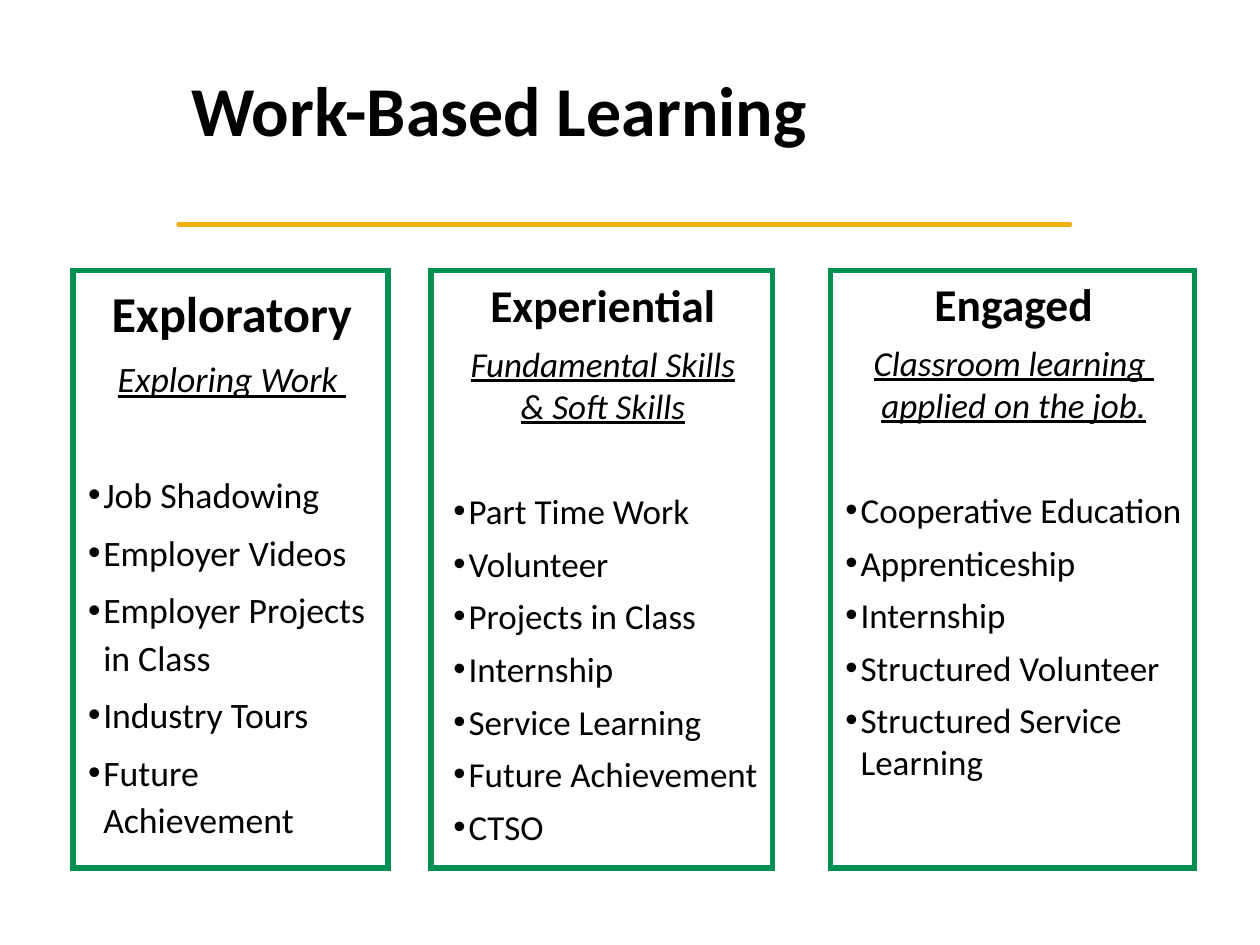
from dataclasses import dataclass

from lxml import etree
from pptx import Presentation
from pptx.dml.color import RGBColor
from pptx.enum.shapes import MSO_CONNECTOR, MSO_SHAPE
from pptx.enum.text import MSO_ANCHOR, PP_ALIGN
from pptx.oxml.ns import qn
from pptx.util import Inches, Pt

STRAIGHT = MSO_CONNECTOR.STRAIGHT
RECTANGLE = MSO_SHAPE.RECTANGLE
LEFT, CENTER = PP_ALIGN.LEFT, PP_ALIGN.CENTER
TOP, MIDDLE = MSO_ANCHOR.TOP, MSO_ANCHOR.MIDDLE


@dataclass(frozen=True)
class Theme:
    font: str = "Calibri"
    text: RGBColor = RGBColor(0, 0, 0)
    rule: RGBColor = RGBColor(0xEE, 0xB1, 0x11)
    border: RGBColor = RGBColor(0x00, 0x90, 0x51)
    line_width: float = 3
    title_size: float = 40
    title_spacing: float = 0.9
    paragraph_gap: float = 6
    natural_line: float = 1.22  # line height of the font, in ems


THEME = Theme()
SLIDE_WIDTH, SLIDE_HEIGHT = 10, 7.5
TITLE = "Work-Based Learning"
TITLE_LEFT, TITLE_TOP, TITLE_WIDTH, TITLE_HEIGHT = 1.42, 0.18, 8.05, 1.45
RULE_RIGHT, RULE_TOP = 8.49, 1.78
COLUMN_TOP, COLUMN_HEIGHT = 2.15, 4.74
HEADING_INDENT, BULLET_INDENT, BULLET_HANG = 0.02, 0.2, 0.12

COLUMNS = [
    {"heading": "Exploratory", "summary": "Exploring Work ",
     "items": ["Job Shadowing", "Employer Videos", "Employer Projects in Class",
               "Industry Tours", "Future Achievement"],
     "left": 0.58, "width": 2.5, "inset": 0.04,
     "heading_size": 28.7, "body_size": 20.4, "spacing": 1.1},
    {"heading": "Experiential", "summary": "Fundamental Skills\n& Soft Skills",
     "items": ["Part Time Work", "Volunteer", "Projects in Class", "Internship",
               "Service Learning", "Future Achievement", "CTSO"],
     "left": 3.42, "width": 2.71, "inset": 0.1,
     "heading_size": 26, "body_size": 20, "spacing": 1.0},
    {"heading": "Engaged", "summary": "Classroom learning \napplied on the job.",
     "items": ["Cooperative Education", "Apprenticeship", "Internship",
               "Structured Volunteer", "Structured Service Learning"],
     "left": 6.59, "width": 2.89, "inset": 0.04,
     "heading_size": 26, "body_size": 20, "spacing": 1.0},
]


def format_paragraph(paragraph, size, spacing, align=LEFT, before=0,
                     bold=False, italic=False, underline=False):
    paragraph.alignment = align
    paragraph.line_spacing = spacing
    paragraph.space_before = Pt(before)
    for run in paragraph.runs:
        font = run.font
        font.name, font.size = THEME.font, Pt(size)
        font.color.rgb = THEME.text
        font.bold, font.italic, font.underline = bold, italic, underline


def set_indent(paragraph, left, hang=0, bullet=None):
    properties = paragraph._p.get_or_add_pPr()
    properties.set("marL", str(Inches(left)))
    properties.set("indent", str(-Inches(hang)))
    if bullet:
        etree.SubElement(properties, qn("a:buFont")).set("typeface", "Arial")
        etree.SubElement(properties, qn("a:buChar")).set("char", bullet)


def add_title(slide):
    box = slide.shapes.add_textbox(Inches(TITLE_LEFT), Inches(TITLE_TOP),
                                   Inches(TITLE_WIDTH), Inches(TITLE_HEIGHT))
    frame = box.text_frame
    frame.word_wrap = True
    frame.vertical_anchor = MIDDLE
    frame.text = TITLE
    format_paragraph(frame.paragraphs[0], THEME.title_size,
                     THEME.title_spacing, bold=True)


def add_rule(slide):
    rule = slide.shapes.add_connector(STRAIGHT, Inches(TITLE_LEFT), Inches(RULE_TOP),
                                      Inches(RULE_RIGHT), Inches(RULE_TOP))
    rule.line.color.rgb = THEME.rule
    rule.line.width = Pt(THEME.line_width)
    rule.line._get_or_add_ln().set("cap", "rnd")
    etree.SubElement(rule._element.spPr, qn("a:effectLst"))


def add_column(slide, column):
    shape = slide.shapes.add_shape(RECTANGLE, Inches(column["left"]), Inches(COLUMN_TOP),
                                   Inches(column["width"]), Inches(COLUMN_HEIGHT))
    shape.shadow.inherit = False
    shape.fill.background()
    shape.line.color.rgb = THEME.border
    shape.line.width = Pt(THEME.line_width)
    etree.SubElement(shape.line._get_or_add_ln(), qn("a:miter")).set("lim", "800000")

    frame = shape.text_frame
    frame.word_wrap = True
    frame.vertical_anchor = TOP
    frame.margin_left = frame.margin_right = Inches(column["inset"])
    frame.margin_top = frame.margin_bottom = Inches(min(column["inset"], 0.05))

    size, spacing, gap = column["body_size"], column["spacing"], THEME.paragraph_gap
    heading, summary = frame.paragraphs[0], frame.add_paragraph()
    heading.text, summary.text = column["heading"], column["summary"]
    for paragraph in (heading, summary):
        set_indent(paragraph, HEADING_INDENT)
    format_paragraph(heading, column["heading_size"], spacing, CENTER, bold=True)
    format_paragraph(summary, size, spacing, CENTER, gap, italic=True, underline=True)

    # The list starts one line of text below the summary.
    list_gap = round(2 * gap + size * THEME.natural_line * spacing, 1)
    for index, item in enumerate(column["items"]):
        paragraph = frame.add_paragraph()
        paragraph.text = item
        set_indent(paragraph, BULLET_INDENT, BULLET_HANG, "•")
        format_paragraph(paragraph, size, spacing, before=gap if index else list_gap)


def main():
    presentation = Presentation()
    presentation.slide_width = Inches(SLIDE_WIDTH)
    presentation.slide_height = Inches(SLIDE_HEIGHT)
    slide = presentation.slides.add_slide(presentation.slide_layouts[6])
    add_rule(slide)
    for column in COLUMNS:
        add_column(slide, column)
    add_title(slide)
    presentation.save("out.pptx")


if __name__ == "__main__":
    main()
